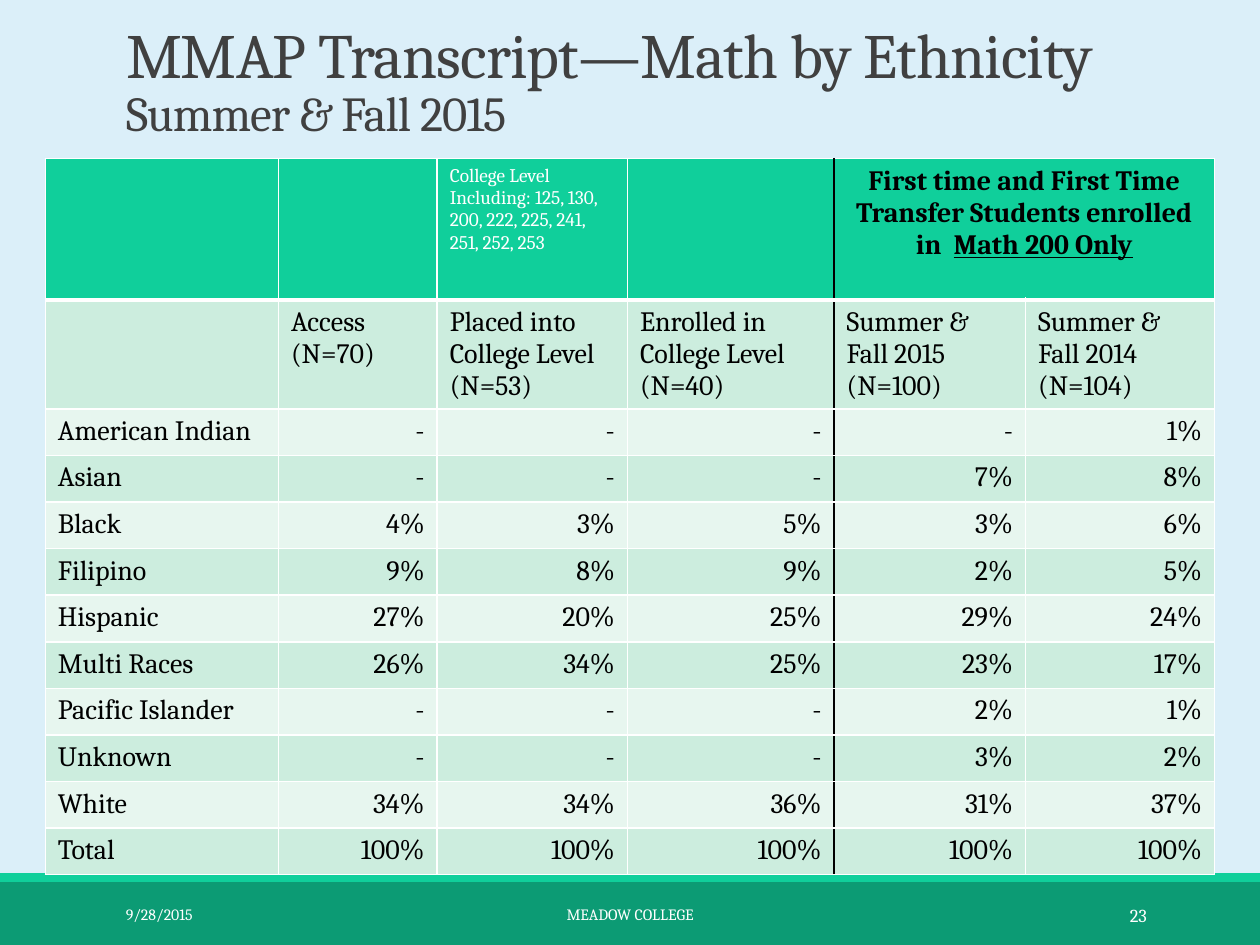
from dataclasses import dataclass

from lxml import etree
from pptx import Presentation
from pptx import util as u
from pptx.dml.color import RGBColor
from pptx.enum import shapes, text
from pptx.oxml.ns import qn

WIDTH, HEIGHT = 10, 7.5
FONT = "Cambria"
COLORS = {
    "background": "DBEFF9", "footer": "0C9B74", "accent": "10CF9B",
    "title": "404040", "dark": "000000", "light": "FFFFFF",
    "band": "CCEDDE", "pale_band": "E7F6EF",
}
ALIGN = text.PP_ALIGN

# Table grid, in inches
COLUMNS = [1.85, 1.26, 1.51, 1.64, 1.52, 1.5]
ROWS = [1.12, 0.86] + [0.37] * 10
DIVIDER = 4  # the black rule stands left of this column

HEADINGS = [
    [""], ["Access (N=70)"], ["Placed into College Level", "(N=53)"],
    ["Enrolled in College Level (N=40)"],
    ["Summer & Fall 2015 (N=100)"], ["Summer & Fall 2014 (N=104)"],
]
SHARES = [
    ("American Indian", "-", "-", "-", "-", "1%"),
    ("Asian", "-", "-", "-", "7%", "8%"),
    ("Black", "4%", "3%", "5%", "3%", "6%"),
    ("Filipino", "9%", "8%", "9%", "2%", "5%"),
    ("Hispanic", "27%", "20%", "25%", "29%", "24%"),
    ("Multi Races", "26%", "34%", "25%", "23%", "17%"),
    ("Pacific Islander", "-", "-", "-", "2%", "1%"),
    ("Unknown", "-", "-", "-", "3%", "2%"),
    ("White", "34%", "34%", "36%", "31%", "37%"),
    ("Total", "100%", "100%", "100%", "100%", "100%"),
]


@dataclass
class Bar:
    top: float
    height: float
    color: str


@dataclass
class FooterItem:
    words: str
    left: float
    width: float
    size: float
    align: ALIGN


BARS = [Bar(7, 0.5, "footer"), Bar(6.93, 0.07, "accent")]
FOOTER = [
    FooterItem("9/28/2015", 0.9, 2.03, 9, ALIGN.LEFT),
    FooterItem("MEADOW COLLEGE", 3.02, 3.96, 9, ALIGN.CENTER),
    FooterItem("23", 8.12, 1.08, 10.5, ALIGN.RIGHT),
]


def rgb(name: str) -> RGBColor:
    return RGBColor.from_string(COLORS[name])


def add_run(paragraph, words: str, size: float, color: str, bold=False, underline=False):
    run = paragraph.add_run()
    run.text = words
    font = run.font
    font.name, font.size = FONT, u.Pt(size)
    font.bold, font.underline = bold, underline
    font.color.rgb = rgb(color)
    return run


def draw_bar(slide, bar: Bar) -> None:
    shape = slide.shapes.add_shape(
        shapes.MSO_SHAPE.RECTANGLE, 0, u.Inches(bar.top), u.Inches(WIDTH), u.Inches(bar.height))
    shape.shadow.inherit = False
    shape.fill.solid()
    shape.fill.fore_color.rgb = rgb(bar.color)
    shape.line.fill.background()


def draw_footer_item(slide, item: FooterItem) -> None:
    box = slide.shapes.add_textbox(
        u.Inches(item.left), u.Inches(7.06), u.Inches(item.width), u.Inches(0.4))
    frame = box.text_frame
    frame.word_wrap = True
    frame.vertical_anchor = text.MSO_ANCHOR.MIDDLE
    paragraph = frame.paragraphs[0]
    paragraph.alignment = item.align
    add_run(paragraph, item.words, item.size, "light")


def draw_title(slide) -> None:
    title = slide.shapes.title
    title.left, title.top = u.Inches(0.9), 0
    title.width, title.height = u.Inches(8.54), u.Inches(1.17)
    frame = title.text_frame
    frame.word_wrap = True
    frame.auto_size = text.MSO_AUTO_SIZE.NONE
    frame.vertical_anchor = text.MSO_ANCHOR.BOTTOM
    paragraph = frame.paragraphs[0]
    paragraph.alignment = ALIGN.LEFT
    paragraph.line_spacing = 0.85
    heading = add_run(paragraph, "MMAP Transcript—Math by Ethnicity", 36, "title")
    paragraph.add_line_break()
    subheading = add_run(paragraph, "Summer & Fall 2015", 27.9, "title")
    for run in (heading, subheading):
        run.font._element.set("spc", "-50")


def style_cell(cell, row: int, column: int) -> None:
    """Draw the cell's borders, then its band colour."""
    sides = {
        "L": ("dark" if column == DIVIDER else "light", 1),
        "R": ("dark" if column == DIVIDER - 1 else "light", 1),
        "T": ("light", 3 if row == 1 else 1),
        "B": ("light", 3 if row == 0 else 1),
    }
    properties = cell._tc.get_or_add_tcPr()
    for side, (color, points) in sides.items():
        line = etree.SubElement(properties, qn("a:ln" + side), w=str(u.Pt(points)))
        fill = etree.SubElement(line, qn("a:solidFill"))
        etree.SubElement(fill, qn("a:srgbClr"), val=COLORS[color])
    cell.fill.solid()
    band = "band" if row % 2 else "pale_band"
    cell.fill.fore_color.rgb = rgb("accent" if row == 0 else band)


def write_cell(cell, lines: list[str], align: ALIGN) -> None:
    frame = cell.text_frame
    for index, words in enumerate(lines):
        paragraph = frame.add_paragraph() if index else frame.paragraphs[0]
        paragraph.alignment = align
        if words:
            add_run(paragraph, words, 16, "dark")


def draw_table(slide) -> None:
    table = slide.shapes.add_table(
        len(ROWS), len(COLUMNS), u.Inches(0.36), u.Inches(1.26),
        u.Inches(sum(COLUMNS)), u.Inches(sum(ROWS))).table
    for column, width in zip(table.columns, COLUMNS):
        column.width = u.Inches(width)
    for row, height in zip(table.rows, ROWS):
        row.height = u.Inches(height)
    for row in range(len(ROWS)):
        for column in range(len(COLUMNS)):
            style_cell(table.cell(row, column), row, column)

    # Top row: course list and the merged group heading
    courses = table.cell(0, 2).text_frame.paragraphs[0]
    add_run(courses, "College Level Including: 125, 130, 200, 222, 225, 241, 251, 252, 253",
            11, "light")
    group = table.cell(0, DIVIDER)
    group.merge(table.cell(0, DIVIDER + 1))
    paragraph = group.text_frame.paragraphs[0]
    paragraph.alignment = ALIGN.CENTER
    add_run(paragraph, "First time and First Time Transfer Students enrolled in  ",
            16, "dark", bold=True)
    add_run(paragraph, "Math 200 Only", 16, "dark", bold=True, underline=True)

    # Column headings and shares
    for column, lines in enumerate(HEADINGS):
        write_cell(table.cell(1, column), lines, ALIGN.LEFT)
    for row, values in enumerate(SHARES, start=2):
        for column, value in enumerate(values):
            write_cell(table.cell(row, column), [value], ALIGN.RIGHT if column else ALIGN.LEFT)


def main() -> None:
    presentation = Presentation()
    presentation.slide_width, presentation.slide_height = u.Inches(WIDTH), u.Inches(HEIGHT)
    slide = presentation.slides.add_slide(presentation.slide_layouts[5])
    slide.background.fill.solid()
    slide.background.fill.fore_color.rgb = rgb("background")
    for bar in BARS:
        draw_bar(slide, bar)
    draw_title(slide)
    draw_table(slide)
    for item in FOOTER:
        draw_footer_item(slide, item)
    presentation.save("out.pptx")


if __name__ == "__main__":
    main()
